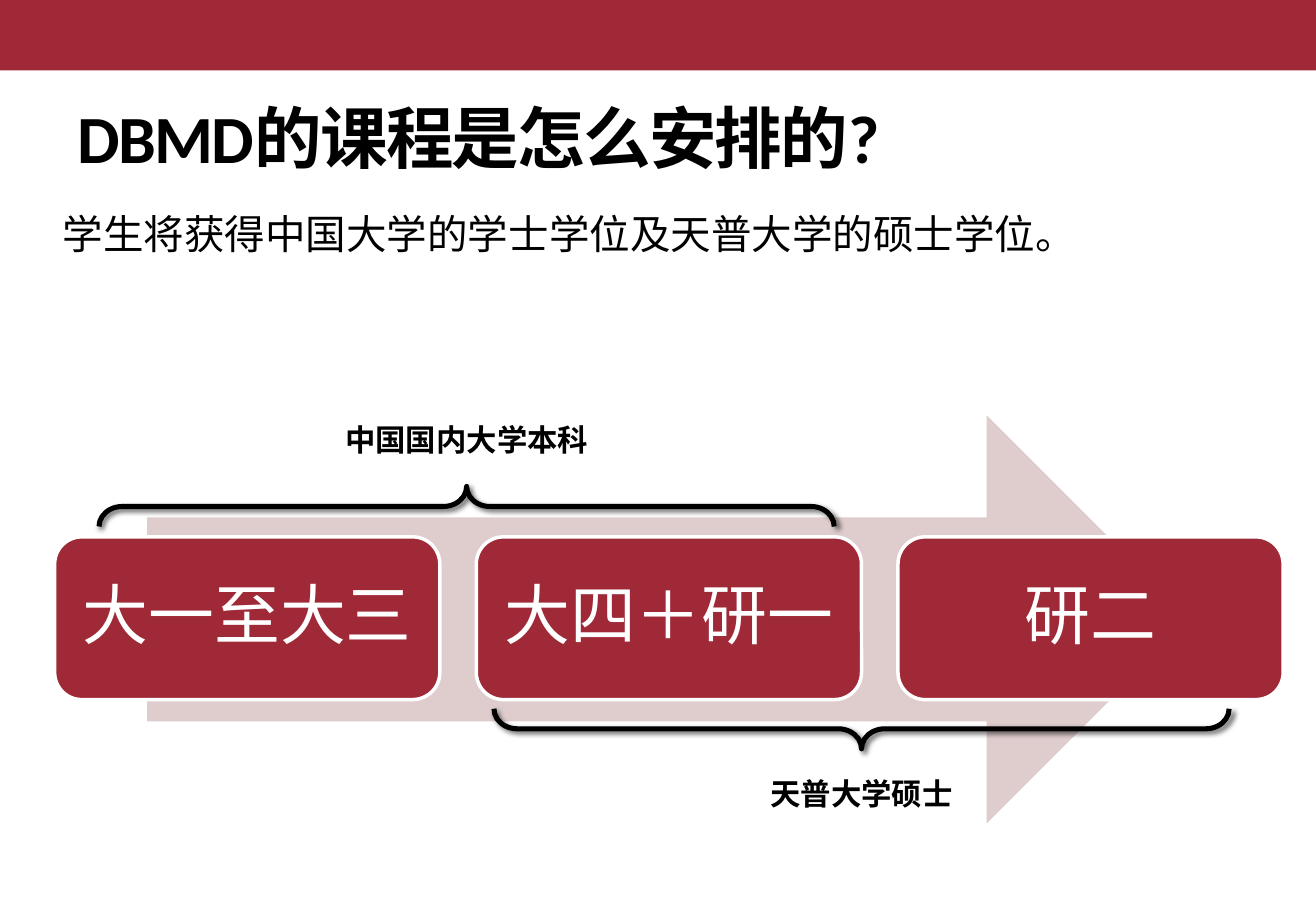
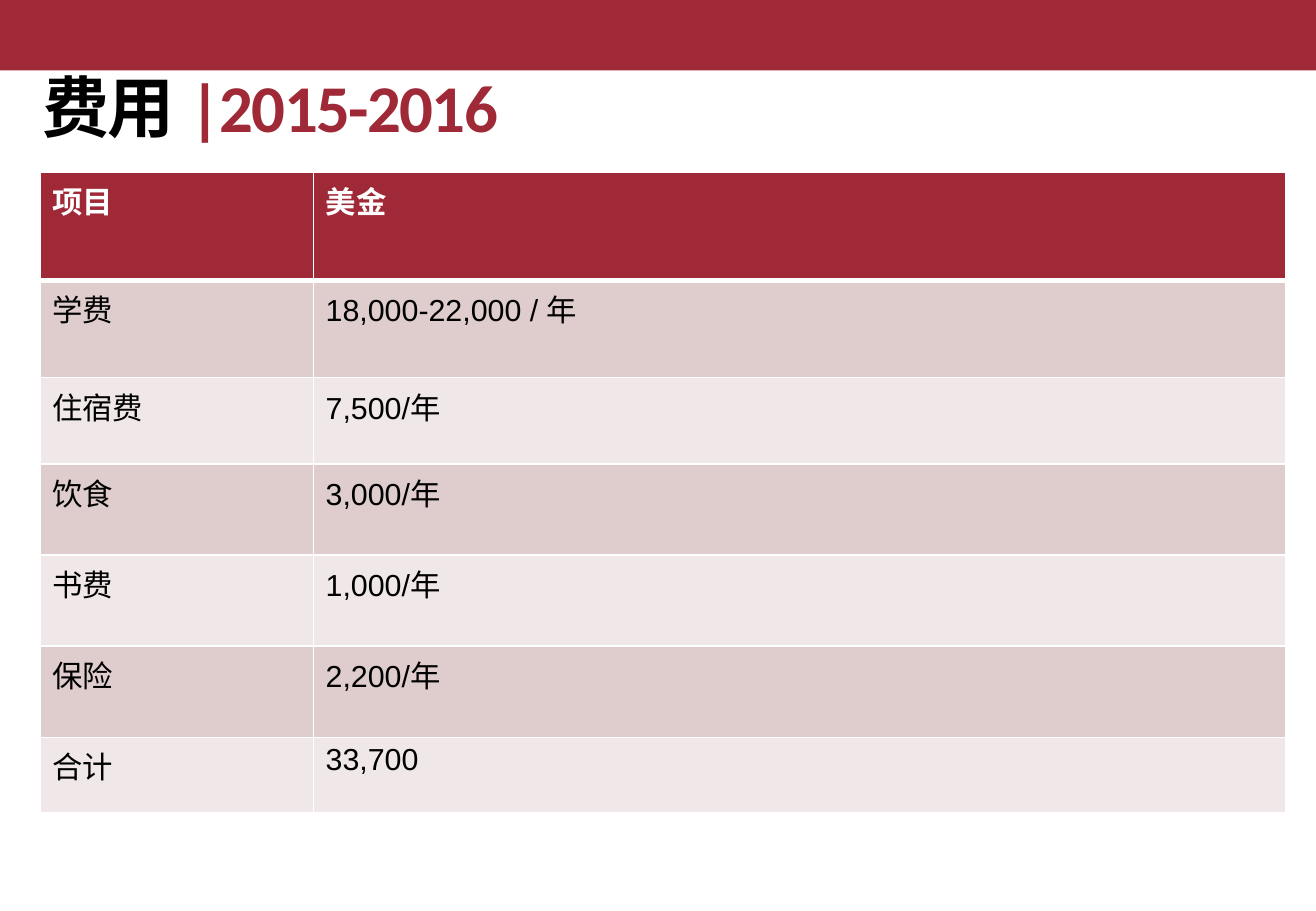
"""Build two slides: the programme timeline and the yearly costs."""
from pptx import Presentation
from pptx import util as u
from pptx.dml.color import RGBColor
from pptx.enum import shapes, text
from pptx.oxml import parse_xml
from pptx.oxml.ns import nsdecls, qn
from lxml import etree

RED, ROSE, PALE, WHITE, BLACK = "9F2936", "DFCDCE", "F0E8E8", "FFFFFF", "000000"
CJK = "Noto Sans CJK SC"
CENTER = text.PP_ALIGN.CENTER
MIDDLE = text.MSO_ANCHOR.MIDDLE

TIMELINE_TITLE = [("DBMD的课程是怎么安排的?", BLACK)]
INTRO = "学生将获得中国大学的学士学位及天普大学的硕士学位。"
STAGES = [("大一至大三", CJK), ("大四＋研一", "Cambria"), ("研二", "Cambria")]
BRACES = [
    ("中国国内大学本科", 3.84, 4.17, 90, 3.42),
    ("天普大学硕士", 7.09, 6.0, 270, 6.33),
]
COST_TITLE = [("费用", BLACK), (" |2015-2016", RED)]
COSTS = [
    ("项目", "美金", 0.89),
    ("学费", "18,000-22,000 / 年", 0.8),
    ("住宿费", "7,500/年", 0.71),
    ("饮食", "3,000/年", 0.75),
    ("书费", "1,000/年", 0.75),
    ("保险", "2,200/年", 0.75),
    ("合计", "33,700", 0.62),
]
COLUMNS = [2.25, 8]


def color(value):
    return RGBColor.from_string(value)


def inches(*values):
    return [u.Inches(value) for value in values]


def style(span, size, font, ink, bold=False):
    span.font.size = u.Pt(size)
    span.font.name = font
    span.font.bold = bold
    span.font.color.rgb = color(ink)
    east = etree.Element(qn("a:ea"), typeface=CJK)
    span._r.get_or_add_rPr().find(qn("a:latin")).addnext(east)


def add_shape(page, kind, place, fill=None, line=None, width=1):
    shape = page.shapes.add_shape(kind, *inches(*place))
    shape.shadow.inherit = False
    if fill:
        shape.fill.solid()
        shape.fill.fore_color.rgb = color(fill)
    else:
        shape.fill.background()
    if line:
        shape.line.color.rgb = color(line)
        shape.line.width = u.Pt(width)
    else:
        shape.line.fill.background()
    return shape


def add_text(page, place, words, size, font, bold=False, wrap=True):
    frame = page.shapes.add_textbox(*inches(*place)).text_frame
    frame.word_wrap = wrap
    para = frame.paragraphs[0]
    para.text = words
    style(para.runs[0], size, font, BLACK, bold)
    return para


def add_page(deck, parts, place, size):
    page = deck.slides.add_slide(deck.slide_layouts[5])
    band = add_shape(page, shapes.MSO_SHAPE.RECTANGLE, (0, 0, 10.83, 0.58), RED)
    page.shapes._spTree.insert(2, band._element)
    title = page.shapes.title
    title.left, title.top, title.width, title.height = inches(*place)
    frame = title.text_frame
    frame.auto_size = text.MSO_AUTO_SIZE.NONE
    frame.vertical_anchor = MIDDLE
    para = frame.paragraphs[0]
    para.alignment = text.PP_ALIGN.LEFT
    for words, ink in parts:
        span = para.add_run()
        span.text = words
        style(span, size, "Calibri", ink, True)
        span._r.rPr.set("spc", "-100")
    return page


def add_brace(page, label, center, middle, turn, label_top):
    depth, length, label_width = 0.33, 6.05, 2.22
    place = (center - depth / 2, middle - length / 2, depth, length)
    brace = add_shape(page, shapes.MSO_SHAPE.LEFT_BRACE, place, None, BLACK, 3)
    brace.rotation = turn
    brace.adjustments[0], brace.adjustments[1] = 0.58, 0.5
    brace._element.spPr.find(qn("a:effectLst")).append(parse_xml(
        f'<a:outerShdw {nsdecls("a")} blurRad="38100" dist="25400" dir="2700000" '
        f'rotWithShape="0"><a:srgbClr val="{BLACK}"><a:alpha val="60000"/>'
        '</a:srgbClr></a:outerShdw>'))
    place = (center - label_width / 2, label_top, label_width, 0.4)
    add_text(page, place, label, 18, CJK, True, False).alignment = CENTER


def add_timeline(page):
    para = add_text(page, (0.42, 1.75, 10.07, 1.5), INTRO, 24, "Calibri")
    para.line_spacing = 0.8
    add_shape(page, shapes.MSO_SHAPE.RIGHT_ARROW, (1.21, 3.42, 8.59, 3.36), ROSE)
    for index, (words, font) in enumerate(STAGES):
        place = (0.45 + index * 3.47, 4.42, 3.17, 1.34)
        box = add_shape(page, shapes.MSO_SHAPE.ROUNDED_RECTANGLE, place, RED, WHITE, 2.08)
        frame = box.text_frame
        frame.margin_left = frame.margin_right = u.Inches(0.15)
        frame.vertical_anchor = MIDDLE
        para = frame.paragraphs[0]
        para.text = words
        para.alignment = CENTER
        para.line_spacing = 0.9
        style(para.runs[0], 39, font, WHITE)
    for brace in BRACES:
        add_brace(page, *brace)


def format_cell(cell, words, row):
    cell.text = words
    header = row == 0
    style(cell.text_frame.paragraphs[0].runs[0], 18, "Arial",
          WHITE if header else BLACK, header)
    widths = {"lnL": 1, "lnR": 1, "lnT": 3 if row == 1 else 1, "lnB": 3 if header else 1}
    for side, width in widths.items():
        cell._tc.get_or_add_tcPr().append(parse_xml(
            f'<a:{side} {nsdecls("a")} w="{u.Pt(width)}"><a:solidFill>'
            f'<a:srgbClr val="{WHITE}"/></a:solidFill></a:{side}>'))
    cell.fill.solid()
    cell.fill.fore_color.rgb = color(RED if header else ROSE if row % 2 else PALE)


def add_costs(page):
    place = (0.33, 1.42, sum(COLUMNS), sum(height for *_, height in COSTS))
    table = page.shapes.add_table(len(COSTS), len(COLUMNS), *inches(*place)).table
    table.horz_banding = False
    for column, width in zip(table.columns, COLUMNS):
        column.width = u.Inches(width)
    for row, (*entries, height) in enumerate(COSTS):
        table.rows[row].height = u.Inches(height)
        for column, words in enumerate(entries):
            format_cell(table.cell(row, column), words, row)


def main():
    deck = Presentation()
    deck.slide_width, deck.slide_height = inches(10.83, 7.5)
    add_timeline(add_page(deck, TIMELINE_TITLE, (0.54, 0.58, 9.75, 1.08), 40))
    add_costs(add_page(deck, COST_TITLE, (0.25, 0.58, 9.62, 0.58), 39.6))
    deck.save("out.pptx")


if __name__ == "__main__":
    main()
